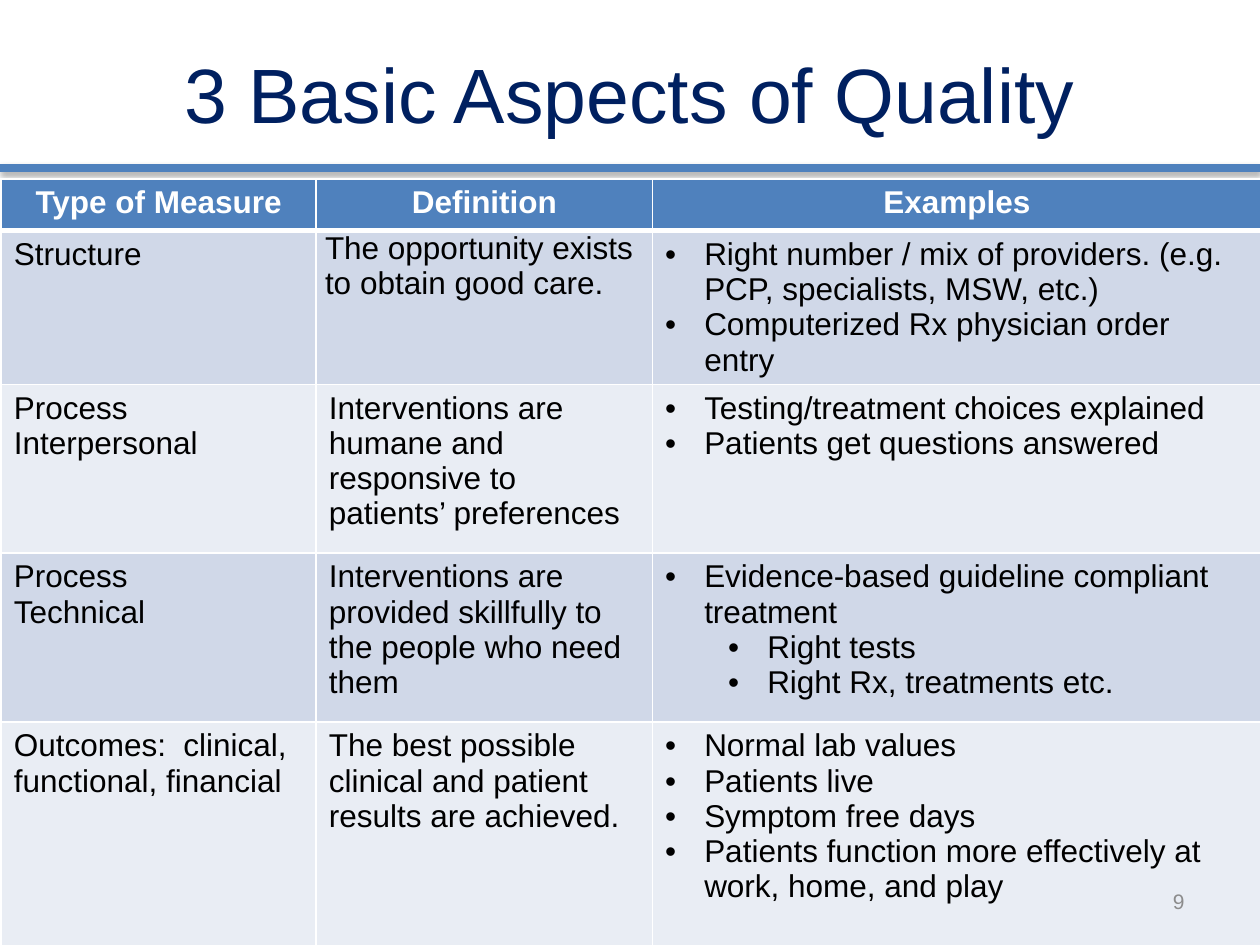
from dataclasses import dataclass
from lxml import etree
from pptx import Presentation, util as u
from pptx.dml.color import RGBColor
from pptx.enum import shapes, text
from pptx.oxml import ns, parse_xml

A = ns.nsdecls("a")
MID = text.PP_ALIGN.CENTER


@dataclass(frozen=True)
class Theme:
    """Colours, font and type sizes."""
    face: str = "Arial"
    title: str = "002060"
    bar: str = "4F81BD"
    bands: tuple = ("D0D8E8", "E9EDF4")
    ink: str = "000000"
    white: str = "FFFFFF"
    mute: str = "8C8C8C"
    head: int = 44
    body: int = 18
    note: int = 12


T = Theme()
COLS = (2.5, 2.67, 4.83)
HEIGHTS = (0.41, 1.03, 1.34, 1.34, 1.96)
HEADS = ("Type of Measure", "Definition", "Examples")
ROWS = (
    (["Structure"], "The opportunity exists to obtain good care.",
     [(0, "Right number / mix of providers. (e.g. PCP, specialists, MSW, etc.)"),
      (0, "Computerized Rx physician order entry")]),
    (["Process", "Interpersonal"],
     "Interventions are humane and responsive to patients’ preferences",
     [(0, "Testing/treatment choices explained"),
      (0, "Patients get questions answered")]),
    (["Process", "Technical"],
     "Interventions are provided skillfully to the people who need them",
     [(0, "Evidence-based guideline compliant treatment"),
      (1, "Right tests"), (1, "Right Rx, treatments etc.")]),
    (["Outcomes:  clinical, functional, financial"],
     "The best possible clinical and patient results are achieved.",
     [(0, "Normal lab values"), (0, "Patients live"), (0, "Symptom free days"),
      (0, "Patients function more effectively at work, home, and play")]),
)


def place(shape, box):
    """Move and size a shape to a box in inches."""
    shape.left, shape.top, shape.width, shape.height = map(u.Inches, box)


def write(frame, lines, size=T.body, color=T.ink, bold=False, align=None, dots=False):
    """Fill a frame with paragraphs, bulleted from (level, text) pairs if dots."""
    frame.word_wrap = True
    for i, line in enumerate(lines):
        para = frame.add_paragraph() if i else frame.paragraphs[0]
        level, words = line if dots else (0, line)
        if dots:
            para.level = level
            props = para._p.get_or_add_pPr()
            props.set("marL", str(u.Inches(0.31 + level / 2)))
            props.set("indent", str(u.Inches(-0.31)))
            etree.SubElement(props, ns.qn("a:buFont"), typeface=T.face)
            etree.SubElement(props, ns.qn("a:buChar"), char="•")
        para.alignment = align
        run = para.add_run()
        run.text = words
        font = run.font
        font.name, font.size, font.bold = T.face, u.Pt(size), bold
        font.color.rgb = RGBColor.from_string(color)


def paint(cell, fill, base=1):
    """Give a cell its white borders and its fill."""
    props = cell._tc.get_or_add_tcPr()
    for side, width in zip("LRTB", (1, 1, 1, base)):
        props.append(parse_xml(
            f'<a:ln{side} {A} w="{u.Pt(width)}"><a:solidFill>'
            f'<a:srgbClr val="{T.white}"/></a:solidFill></a:ln{side}>'))
    cell.fill.solid()
    cell.fill.fore_color.rgb = RGBColor.from_string(fill)


def header(slide, box):
    """Place the title and the shadowed rule below it."""
    title = slide.shapes.title
    place(title, box)
    title.text_frame.vertical_anchor = text.MSO_ANCHOR.MIDDLE
    write(title.text_frame, ["3 Basic Aspects of Quality"], T.head, T.title, align=MID)
    y = u.Inches(box[1] + box[3] + 0.16)
    rule = slide.shapes.add_connector(
        shapes.MSO_CONNECTOR.STRAIGHT, 0, y, u.Inches(10), y)
    rule.line.color.rgb = RGBColor.from_string(T.bar)
    rule.line.width = u.Pt(4.5)
    rule._element.spPr.append(parse_xml(
        f'<a:effectLst {A}><a:outerShdw blurRad="{u.Pt(3.1)}" dist="{u.Pt(1.8)}" '
        f'dir="5400000" rotWithShape="0"><a:srgbClr val="{T.ink}">'
        '<a:alpha val="35000"/></a:srgbClr></a:outerShdw></a:effectLst>'))


def grid(slide, box):
    """Place the table of measures."""
    table = slide.shapes.add_table(
        len(HEIGHTS), len(COLS), *map(u.Inches, box)).table
    for col, width in zip(table.columns, COLS):
        col.width = u.Inches(width)
    for row, height in zip(table.rows, HEIGHTS):
        row.height = u.Inches(height)
    for c, name in enumerate(HEADS):
        cell = table.cell(0, c)
        paint(cell, T.bar, 3)
        write(cell.text_frame, [name], color=T.white, bold=True, align=MID)
    for r, (kind, means, cases) in enumerate(ROWS, 1):
        for c, lines in enumerate((kind, [means], cases)):
            cell = table.cell(r, c)
            paint(cell, T.bands[(r - 1) % 2])
            write(cell.text_frame, lines, dots=c == 2)
    tight = table.cell(1, 1)
    tight.margin_left = tight.margin_right = u.Inches(0.07)
    tight.margin_top = tight.margin_bottom = 0


def number(slide, box):
    """Place the page number."""
    frame = slide.shapes.add_textbox(*map(u.Inches, box)).text_frame
    frame.vertical_anchor = text.MSO_ANCHOR.MIDDLE
    write(frame, ["9"], T.note, T.mute, align=text.PP_ALIGN.RIGHT)


def main():
    """Build and save the slide."""
    deck = Presentation()
    deck.slide_width, deck.slide_height = u.Inches(10), u.Inches(7.5)
    slide = deck.slides.add_slide(deck.slide_layouts[5])
    header(slide, (0.5, 0.3, 9, 0.87))
    grid(slide, (0.01, 1.42, sum(COLS), sum(HEIGHTS)))
    number(slide, (7.17, 6.95, 2.33, 0.4))
    deck.save("out.pptx")


if __name__ == "__main__":
    main()
